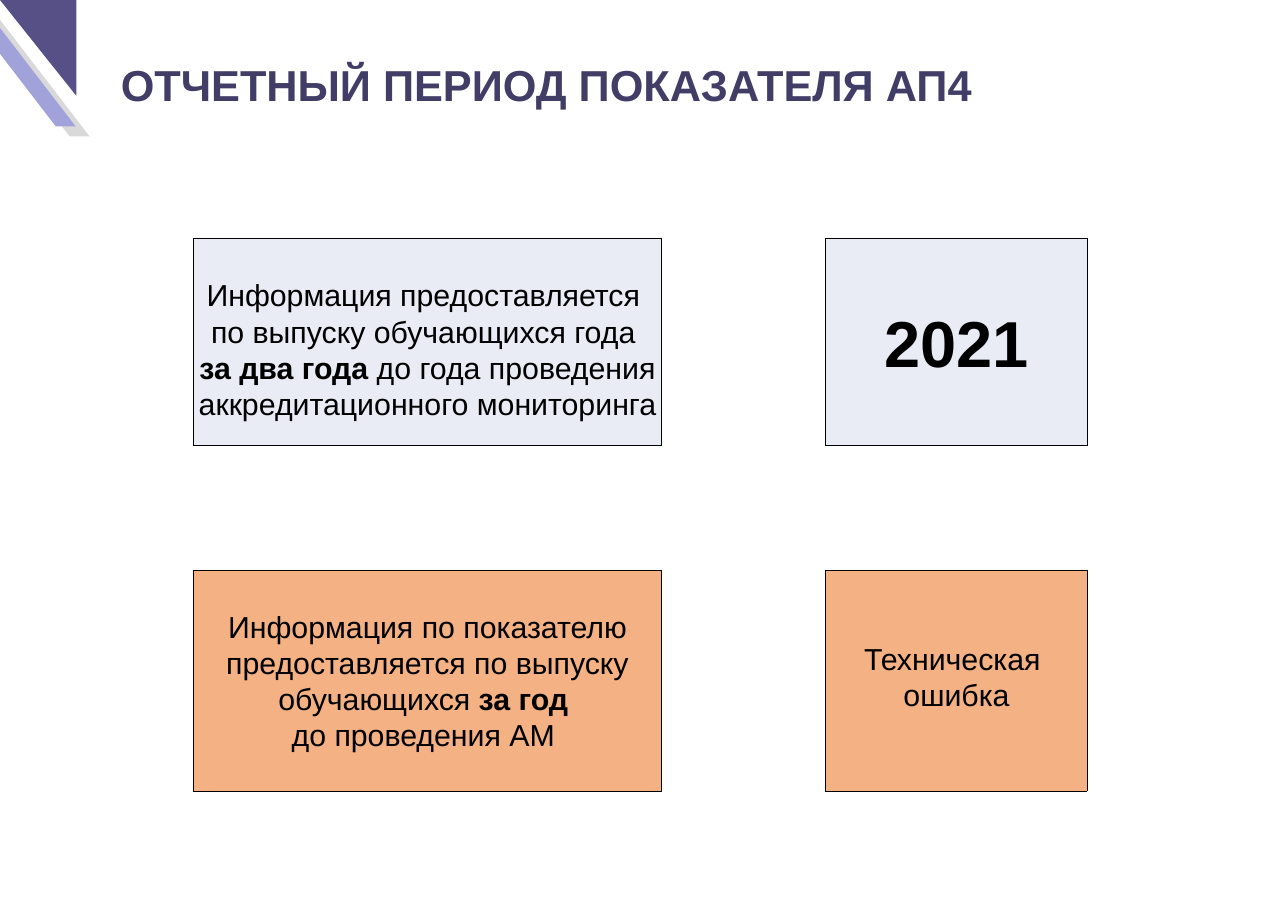
import pptx
import pptx.dml.color
import pptx.enum.shapes
import pptx.enum.text
import pptx.oxml
import pptx.oxml.ns
import pptx.util

Inches = pptx.util.Inches
Pt = pptx.util.Pt
SHAPE = pptx.enum.shapes.MSO_SHAPE
ANCHOR = pptx.enum.text.MSO_ANCHOR


def paint(fill, color):
    fill.solid()
    fill.fore_color.rgb = pptx.dml.color.RGBColor.from_string(color)


def style_font(font, size, color, bold):
    font.name = "Arial"
    font.size = Pt(size)
    font.bold = bold
    paint(font.fill, color)


deck = pptx.Presentation()
deck.slide_width = Inches(16.53)
deck.slide_height = Inches(11.69)
page = deck.slides.add_slide(deck.slide_layouts[6])

# Corner ornament
for kind, left, top, width, height, color in [
    (SHAPE.PARALLELOGRAM, -0.35, 0.13, 1.5, 1.62, "D9D9D9"),
    (SHAPE.PARALLELOGRAM, -0.53, 0, 1.5, 1.62, "A2A2DA"),
    (SHAPE.RIGHT_TRIANGLE, 0, 0, 0.98, 1.23, "565087"),
]:
    ornament = page.shapes.add_shape(
        kind, Inches(left), Inches(top), Inches(width), Inches(height))
    ornament.shadow.inherit = False
    ornament.line.fill.background()
    paint(ornament.fill, color)
    if kind == SHAPE.PARALLELOGRAM:
        ornament.adjustments[0] = 0.83
        ornament.element.spPr.xfrm.set("flipH", "1")
    else:
        ornament.rotation = 180

# Title
title = page.shapes.add_textbox(Inches(1.55), Inches(0.7), Inches(12.41), Inches(0.77))
title.text_frame.word_wrap = True
title.text_frame.margin_left = 0
title.text_frame.text = "ОТЧЕТНЫЙ ПЕРИОД ПОКАЗАТЕЛЯ АП4"
style_font(title.text_frame.paragraphs[0].runs[0].font, 40, "423D67", True)

# One-cell tables in a two by two grid; ** marks bold text
COLUMNS = [(2.48, 6.01), (10.6, 3.35)]
ROWS = [(3.06, 2.66, "E9EBF5"), (7.32, 2.83, "F4B183")]
CELLS = [
    [
        (["Информация предоставляется ",
          "по выпуску обучающихся года ",
          "**за два года **до года проведения аккредитационного мониторинга"],
         28, ANCHOR.MIDDLE, 0.23),
        (["**2021**"], 60, ANCHOR.MIDDLE, 0.04),
    ],
    [
        (["Информация по показателю предоставляется по выпуску обучающихся **за год **",
          "до проведения АМ "],
         28, ANCHOR.MIDDLE, 0.04),
        (["Техническая ", "ошибка"], 28, ANCHOR.TOP, 0.9),
    ],
]

for (top, height, color), row_cells in zip(ROWS, CELLS):
    for (left, width), (lines, size, anchor, margin_top) in zip(COLUMNS, row_cells):
        table = page.shapes.add_table(
            1, 1, Inches(left), Inches(top), Inches(width), Inches(height)).table
        table.first_row = False
        table.horz_banding = False
        cell = table.cell(0, 0)
        cell.vertical_anchor = anchor
        cell.margin_left = cell.margin_right = Inches(0.02)
        cell.margin_top = Inches(margin_top)
        cell.margin_bottom = Inches(0.04)

        for side in ("lnL", "lnR", "lnT", "lnB"):
            border = pptx.oxml.parse_xml(
                f'<a:{side} {pptx.oxml.ns.nsdecls("a")} w="12700"><a:solidFill>'
                f'<a:srgbClr val="000000"/></a:solidFill></a:{side}>')
            cell._tc.get_or_add_tcPr().append(border)
        paint(cell.fill, color)

        cell.text_frame.text = "\n".join(line.replace("**", "") for line in lines)
        for para, line in zip(cell.text_frame.paragraphs, lines):
            para.alignment = pptx.enum.text.PP_ALIGN.CENTER
            para.line_spacing = 1.07
            para.text = ""
            for index, part in enumerate(line.split("**")):
                if part:
                    span = para.add_run()
                    span.text = part
                    style_font(span.font, size, "000000", index % 2 == 1)

deck.save("out.pptx")
